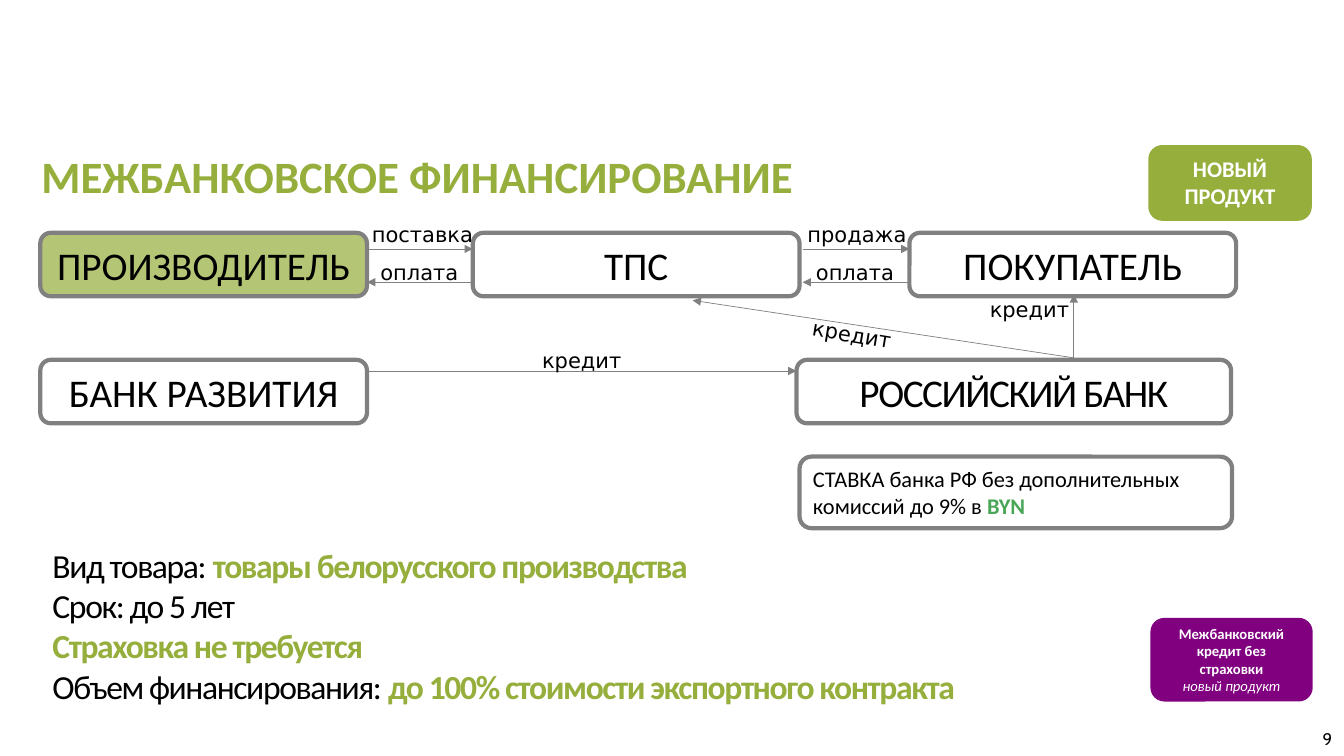
import pptx
import pptx.util
import pptx.dml.color
import pptx.enum.shapes
import pptx.enum.text
import pptx.oxml.ns
from lxml import etree

Inches = pptx.util.Inches
ALIGN = pptx.enum.text.PP_ALIGN
ANCHOR = pptx.enum.text.MSO_ANCHOR
GREEN = "95AE3C"
GRAY = "808080"
BLACK = "000000"
WHITE = "FFFFFF"
PURPLE = "800080"
CURRENCY_GREEN = "4AA657"


def color(value):
    return pptx.dml.color.RGBColor.from_string(value)


class Diagram:
    font_name = "Calibri"
    label_font = "DejaVu Sans"

    def __init__(self, slide):
        self.slide = slide

    def fill_text(self, shape, lines, size, align=ALIGN.CENTER, font=None, ink=BLACK,
                  bold=False, spacing=0, anchor=ANCHOR.TOP):
        frame = shape.text_frame
        frame.word_wrap = True
        frame.vertical_anchor = anchor
        for index, line in enumerate(lines):
            paragraph = frame.paragraphs[0] if index == 0 else frame.add_paragraph()
            paragraph.alignment = align
            paragraph.font.name = font or self.font_name
            paragraph.font.size = pptx.util.Pt(size)
            paragraph.font.bold = bold
            paragraph.font.color.rgb = color(ink)
            for part in [line] if isinstance(line, str) else line:
                text, accent = (part, None) if isinstance(part, str) else part
                run = paragraph.add_run()
                run.text = text
                if accent:
                    run.font.bold = True
                    run.font.color.rgb = color(accent)
                if spacing:
                    run._r.get_or_add_rPr().set("spc", str(spacing * 100))
        return frame

    def text(self, left, top, width, height, line, size, **style):
        box = self.slide.shapes.add_textbox(
            Inches(left), Inches(top), Inches(width), Inches(height))
        self.fill_text(box, [line], size, **style)
        return box

    def label(self, left, top, line, width=1.22, align=ALIGN.CENTER):
        return self.text(left, top, width, 0.35, line, 15,
                         align=align, font=self.label_font)

    def box(self, left, top, width, height, lines, size,
            fill=None, outline=GRAY, alpha=None, **style):
        shape = self.slide.shapes.add_shape(
            pptx.enum.shapes.MSO_SHAPE.ROUNDED_RECTANGLE,
            Inches(left), Inches(top), Inches(width), Inches(height))
        shape.shadow.inherit = False
        if fill:
            shape.fill.solid()
            shape.fill.fore_color.rgb = color(fill)
        else:
            shape.fill.background()
        if alpha:
            tint = shape._element.spPr.find(".//" + pptx.oxml.ns.qn("a:srgbClr"))
            etree.SubElement(tint, pptx.oxml.ns.qn("a:alpha"), val=str(alpha * 1000))
        if outline:
            shape.line.color.rgb = color(outline)
            shape.line.width = pptx.util.Pt(3)
        else:
            shape.line.fill.background()
        return self.fill_text(shape, lines, size, **style)

    def arrow(self, start, end):
        connector = self.slide.shapes.add_connector(
            pptx.enum.shapes.MSO_CONNECTOR.STRAIGHT,
            Inches(start[0]), Inches(start[1]), Inches(end[0]), Inches(end[1]))
        connector.line.color.rgb = color(GRAY)
        connector.line.width = pptx.util.Pt(0.5)
        properties = connector._element.spPr
        etree.SubElement(properties.find(pptx.oxml.ns.qn("a:ln")),
                         pptx.oxml.ns.qn("a:tailEnd"), type="triangle")
        etree.SubElement(properties, pptx.oxml.ns.qn("a:effectLst"))


def main():
    presentation = pptx.Presentation()
    presentation.slide_width = Inches(13.33)
    presentation.slide_height = Inches(7.5)
    diagram = Diagram(presentation.slides.add_slide(presentation.slide_layouts[6]))

    title = diagram.text(0.37, 1.43, 12.62, 0.64, "МЕЖБАНКОВСКОЕ ФИНАНСИРОВАНИЕ", 32,
                         align=ALIGN.LEFT, ink=GREEN, bold=True)
    title.text_frame.margin_left = title.text_frame.margin_right = Inches(0.04)

    for left, top, width, name, style in [
        (0.4, 2.31, 3.24, "ПРОИЗВОДИТЕЛЬ", {"fill": GREEN, "alpha": 70}),
        (4.69, 2.31, 3.24, "ТПС", {}),
        (9.02, 2.31, 3.24, "ПОКУПАТЕЛЬ", {}),
        (0.4, 3.57, 3.24, "БАНК РАЗВИТИЯ", {}),
        (7.9, 3.57, 4.31, "РОССИЙСКИЙ БАНК", {"spacing": -1}),
    ]:
        diagram.box(left, top, width, 0.63, [name], 28, **style)

    for left, right, label_left, goods in [
        (3.64, 4.69, 3.59, "поставка"),
        (7.96, 9.02, 7.91, "продажа"),
    ]:
        diagram.arrow((left, 2.47), (right, 2.47))
        diagram.arrow((right, 2.8), (left, 2.8))
        diagram.label(label_left, 2.15, goods, align=ALIGN.LEFT)
        diagram.label(label_left, 2.53, "оплата", width=1.14)

    for start, end, left, top, rotation in [
        ((3.65, 3.68), (7.9, 3.68), 5.16, 3.4, 0),
        ((10.65, 3.55), (10.65, 2.92), 9.6, 2.89, 0),
        ((10.65, 3.55), (6.87, 2.98), 7.84, 3.14, 9.5),
    ]:
        diagram.arrow(start, end)
        diagram.label(left, top, "кредит").rotation = rotation

    diagram.box(7.93, 4.53, 4.29, 0.71, [
        ["СТАВКА банка РФ без дополнительных комиссий до 9% в ", ("BYN", CURRENCY_GREEN)],
    ], 16, align=ALIGN.LEFT)
    diagram.box(0.33, 5.26, 11.86, 1.9, [
        ["Вид товара: ", ("товары белорусского производства", GREEN)],
        "Срок: до 5 лет",
        [("Страховка не требуется", GREEN)],
        ["Объем финансирования: ", ("до 100% стоимости экспортного контракта", GREEN)],
    ], 24, outline=None, align=ALIGN.LEFT, spacing=-1)

    diagram.box(11.41, 1.46, 1.58, 0.71, ["НОВЫЙ ПРОДУКТ"], 16,
                fill=GREEN, outline=GREEN, ink=WHITE, bold=True)
    badge = diagram.box(11.41, 6.13, 1.61, 0.83,
                        ["Межбанковский кредит без страховки", "новый продукт"], 10.5,
                        fill=PURPLE, outline=None, ink=WHITE, bold=True,
                        anchor=ANCHOR.MIDDLE)
    badge.paragraphs[1].font.bold = False
    badge.paragraphs[1].font.italic = True

    diagram.text(12.57, 7.18, 0.74, 0.33, "9", 12, align=ALIGN.RIGHT, font="Cabin")
    presentation.save("out.pptx")


if __name__ == "__main__":
    main()
